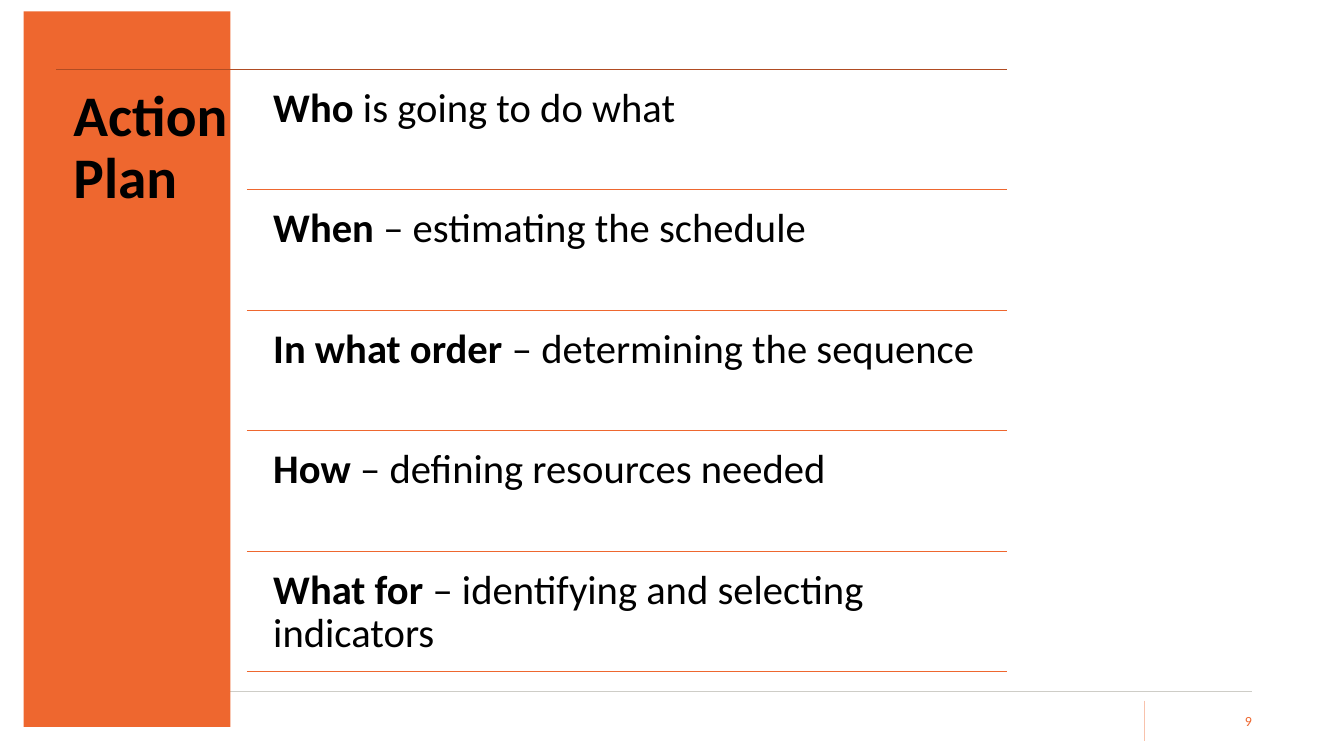
from dataclasses import dataclass

from lxml import etree
from pptx import Presentation
from pptx.dml.color import RGBColor
from pptx.enum.shapes import MSO_CONNECTOR, MSO_SHAPE
from pptx.enum.text import MSO_ANCHOR, PP_ALIGN
from pptx.oxml.ns import qn
from pptx.shapes.connector import Connector
from pptx.slide import Slide
from pptx.util import Pt

ORANGE = RGBColor(0xEE, 0x67, 0x2F)
DARK_ORANGE = RGBColor(0xB0, 0x4C, 0x23)
PALE_ORANGE = RGBColor(0xF8, 0xC2, 0xAC)
GREY = RGBColor(0xCE, 0xCD, 0xC7)
BLACK = RGBColor(0, 0, 0)

FONT = "Calibri"
ROW_PITCH = 86
FIRST_STEP_TOP = 53.7
FIRST_DIVIDER_Y = 135.5
STEP_LEFT, DIVIDER_LEFT, CONTENT_RIGHT = 186.5, 176.4, 719.3


@dataclass(frozen=True)
class Box:
    left: float
    top: float
    width: float
    height: float


@dataclass(frozen=True)
class Run:
    text: str
    bold: bool = False


@dataclass(frozen=True)
class TextStyle:
    size: float
    color: RGBColor = BLACK
    inset_x: float = 0
    inset_y: float = 0
    line_spacing: float = 0.9
    align: PP_ALIGN = PP_ALIGN.LEFT
    anchor: MSO_ANCHOR = MSO_ANCHOR.TOP


@dataclass(frozen=True)
class Rule:
    x1: float
    y1: float
    x2: float
    y2: float
    color: RGBColor
    shadow: bool = False


@dataclass(frozen=True)
class Step:
    question: str
    answer: str


STEPS = (
    Step("Who ", "is going to do what"),
    Step("When ", "– estimating the schedule"),
    Step("In what order ", "– determining the sequence"),
    Step("How ", "– defining resources needed"),
    Step("What for ", "– identifying and selecting indicators"),
)
FOOTER_RULES = (
    Rule(66.2, 493.9, 894.2, 493.9, GREY),
    Rule(817.2, 500.4, 817.2, 529.2, PALE_ORANGE),
)
TITLE_RULE = Rule(40.3, 49.7, CONTENT_RIGHT, 49.7, DARK_ORANGE, shadow=True)

TITLE_STYLE = TextStyle(41, inset_x=12.2, inset_y=12.2)
STEP_STYLE = TextStyle(29, inset_x=8.7, inset_y=8.7)
NUMBER_STYLE = TextStyle(10, ORANGE, inset_y=3.6, line_spacing=1.0,
                         align=PP_ALIGN.RIGHT, anchor=MSO_ANCHOR.MIDDLE)


def set_line_effects(line: Connector, shadow: bool) -> None:
    """Replace the theme shadow by none, or by a soft one below the line."""
    properties = line.line._get_or_add_ln().getparent()
    effects = etree.SubElement(properties, qn("a:effectLst"))
    if shadow:
        outer = etree.SubElement(effects, qn("a:outerShdw"), blurRad=str(Pt(4.5)),
                                 dist=str(Pt(1.5)), dir="5400000", rotWithShape="0")
        black = etree.SubElement(outer, qn("a:srgbClr"), val="000000")
        etree.SubElement(black, qn("a:alpha"), val="63000")


def add_rule(slide: Slide, rule: Rule) -> None:
    line = slide.shapes.add_connector(MSO_CONNECTOR.STRAIGHT, Pt(rule.x1), Pt(rule.y1),
                                      Pt(rule.x2), Pt(rule.y2))
    line.line.color.rgb = rule.color
    line.line.width = Pt(0.5)
    set_line_effects(line, rule.shadow)


def add_text(slide: Slide, box: Box, runs: tuple[Run, ...], style: TextStyle) -> None:
    frame = slide.shapes.add_textbox(Pt(box.left), Pt(box.top),
                                     Pt(box.width), Pt(box.height)).text_frame
    frame_format = {
        "word_wrap": True,
        "vertical_anchor": style.anchor,
        "margin_left": Pt(style.inset_x),
        "margin_right": Pt(style.inset_x),
        "margin_top": Pt(style.inset_y),
        "margin_bottom": Pt(style.inset_y),
    }
    for name, value in frame_format.items():
        setattr(frame, name, value)
    paragraph = frame.paragraphs[0]
    paragraph.alignment = style.align
    paragraph.line_spacing = style.line_spacing
    for run in runs:
        piece = paragraph.add_run()
        piece.text = run.text
        font_format = {"name": FONT, "size": Pt(style.size), "bold": run.bold}
        for name, value in font_format.items():
            setattr(piece.font, name, value)
        piece.font.color.rgb = style.color


def add_side_band(slide: Slide) -> None:
    band = slide.shapes.add_shape(MSO_SHAPE.RECTANGLE, Pt(16.9), Pt(8.1), Pt(147.6), Pt(511.2))
    band.shadow.inherit = False
    band.fill.solid()
    band.fill.fore_color.rgb = ORANGE
    band.line.fill.background()


def add_step(slide: Slide, row: int, step: Step) -> None:
    offset = row * ROW_PITCH
    box = Box(STEP_LEFT, FIRST_STEP_TOP + offset, CONTENT_RIGHT - STEP_LEFT, 82)
    add_text(slide, box, (Run(step.question, bold=True), Run(step.answer)), STEP_STYLE)
    divider_y = FIRST_DIVIDER_Y + offset
    add_rule(slide, Rule(DIVIDER_LEFT, divider_y, CONTENT_RIGHT, divider_y, ORANGE))


def main() -> None:
    deck = Presentation()
    deck.slide_width, deck.slide_height = Pt(960), Pt(540)
    slide = deck.slides.add_slide(deck.slide_layouts[6])

    for rule in FOOTER_RULES:
        add_rule(slide, rule)
    add_side_band(slide)
    add_text(slide, Box(825.8, 500.4, 68.4, 28.8), (Run("9"),), NUMBER_STYLE)

    add_rule(slide, TITLE_RULE)
    add_text(slide, Box(40.3, 49.7, 136.1, 434.2), (Run("Action Plan", bold=True),), TITLE_STYLE)
    for row, step in enumerate(STEPS):
        add_step(slide, row, step)

    deck.save("out.pptx")


if __name__ == "__main__":
    main()
